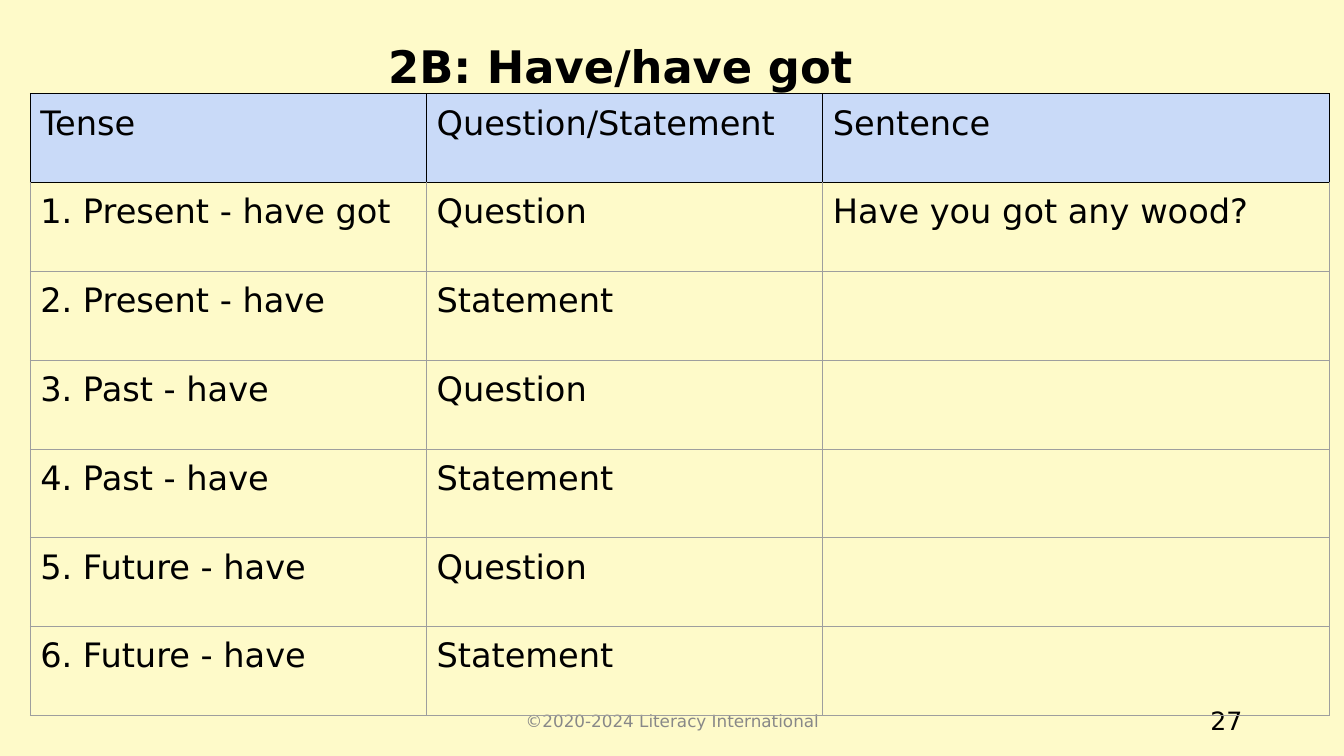
from dataclasses import dataclass

from lxml import etree
from pptx import Presentation
from pptx import util as u
from pptx.dml.color import RGBColor
from pptx.enum import text
from pptx.oxml.ns import qn


@dataclass(frozen=True)
class Theme:
    font: str = "DejaVu Sans"
    background: str = "FEFAC9"
    ink: str = "000000"
    muted: str = "888888"
    header_fill: str = "C9DAF8"
    grid: str = "9E9E9E"
    title_size: int = 32
    table_size: int = 24
    number_size: int = 18
    footer_size: int = 12
    border_width: float = 0.75


THEME = Theme()
HEADERS = ["Tense", "Question/Statement", "Sentence"]
TENSES = ["Present - have got", "Present - have", "Past - have",
          "Past - have", "Future - have", "Future - have"]
KINDS = ["Question", "Statement"]
SENTENCES = {1: "Have you got any wood?"}
COLUMN_WIDTHS = [3.93, 3.93, 5.03]


def format_text(tf, size, color=THEME.ink, bold=False, align=text.PP_ALIGN.LEFT):
    for p in tf.paragraphs:
        p.alignment = align
        for r in p.runs:
            r.font.name = THEME.font
            r.font.size = u.Pt(size)
            r.font.bold = bold
            r.font.color.rgb = RGBColor.from_string(color)


def place(sp, box):
    sp.left, sp.top, sp.width, sp.height = map(u.Inches, box)


def add_title(s, box, title):
    sp = s.shapes.title
    place(sp, box)
    tf = sp.text_frame
    tf.text = title
    tf.word_wrap = True
    tf.vertical_anchor = text.MSO_ANCHOR.MIDDLE
    tf.paragraphs[0].line_spacing = 0.9
    format_text(tf, THEME.title_size, bold=True)


def add_footer(s, box, words, size, color, align):
    tf = s.shapes.add_textbox(*map(u.Inches, box)).text_frame
    tf.text = words
    tf.word_wrap = True
    tf.vertical_anchor = text.MSO_ANCHOR.MIDDLE
    format_text(tf, size, color, align=align)


def set_borders(cell, colors):
    tc_pr = cell._tc.get_or_add_tcPr()
    for i, (side, color) in enumerate(zip("LRTB", colors)):
        ln = etree.Element(qn(f"a:ln{side}"), w=str(u.Pt(THEME.border_width)))
        fill = etree.SubElement(ln, qn("a:solidFill"))
        etree.SubElement(fill, qn("a:srgbClr"), val=color)
        tc_pr.insert(i, ln)


def fill_cell(cell, words, row):
    cell.margin_left = cell.margin_right = u.Inches(0.1)
    cell.margin_top = cell.margin_bottom = u.Inches(0.1)
    cell.text = words
    format_text(cell.text_frame, THEME.table_size)
    if row == 0:
        cell.fill.solid()
        cell.fill.fore_color.rgb = RGBColor.from_string(THEME.header_fill)
        set_borders(cell, [THEME.ink] * 4)
    else:
        cell.fill.background()
        top = THEME.ink if row == 1 else THEME.grid
        set_borders(cell, [THEME.grid, THEME.grid, top, THEME.grid])


def add_tense_table(s, box):
    rows = [HEADERS] + [
        [f"{n}. {tense}", KINDS[(n - 1) % 2], SENTENCES.get(n, "")]
        for n, tense in enumerate(TENSES, 1)
    ]
    table = s.shapes.add_table(len(rows), len(HEADERS), *map(u.Inches, box)).table
    table.first_row = table.horz_banding = False
    for column, width in zip(table.columns, COLUMN_WIDTHS):
        column.width = u.Inches(width)
    for i, row in enumerate(rows):
        table.rows[i].height = u.Inches(box[3] / len(rows))
        for j, words in enumerate(row):
            fill_cell(table.cell(i, j), words, i)


def main():
    prs = Presentation()
    prs.slide_width, prs.slide_height = u.Inches(13.33), u.Inches(7.5)
    s = prs.slides.add_slide(prs.slide_layouts[5])
    s.background.fill.solid()
    s.background.fill.fore_color.rgb = RGBColor.from_string(THEME.background)
    add_title(s, (3.75, -0.04, 9.78, 1.45), "2B: Have/have got")
    add_footer(s, (4.42, 6.95, 4.5, 0.4), "©2020-2024 Literacy International",
               THEME.footer_size, THEME.muted, text.PP_ALIGN.CENTER)
    add_footer(s, (9.42, 6.95, 3, 0.4), "27",
               THEME.number_size, THEME.ink, text.PP_ALIGN.RIGHT)
    add_tense_table(s, (0.3, 0.93, sum(COLUMN_WIDTHS), 6.17))
    prs.save("out.pptx")


if __name__ == "__main__":
    main()
